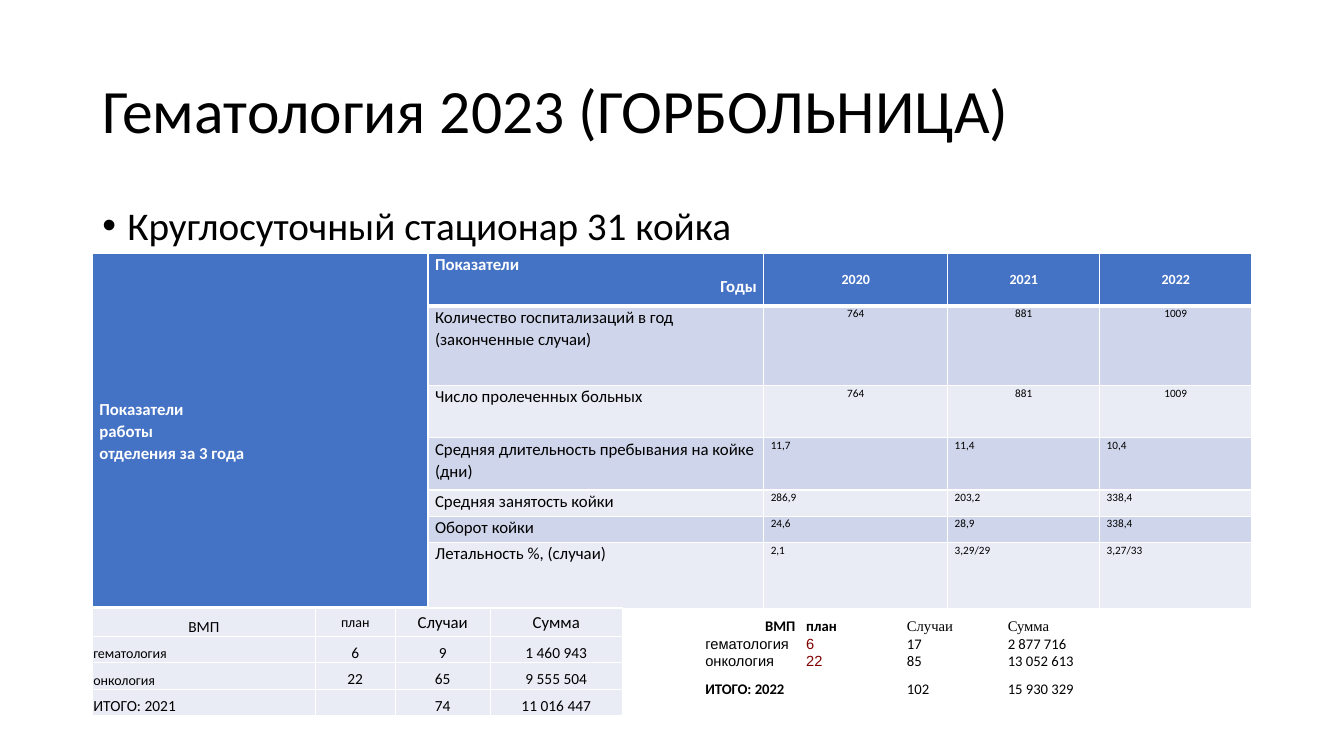
"""Build the haematology department slide with its yearly indicators and high-tech care totals."""
from lxml.etree import SubElement
from pptx import Presentation
from pptx.dml.color import RGBColor
from pptx.enum.text import MSO_ANCHOR as Anchor, PP_ALIGN as Align
from pptx.oxml import parse_xml
from pptx.oxml.ns import nsdecls, qn
from pptx.util import Pt

TITLE = "Гематология 2023 (ГОРБОЛЬНИЦА)"
WARD = "Круглосуточный стационар 31 койка"
DEPARTMENT = ["Показатели", "работы", "отделения за 3 года"]
YEARS = ["2020", "2021", "2022"]
INDICATORS = [
    ("Количество госпитализаций в год (законченные случаи)", Align.CENTER, ["764", "881", "1009"]),
    ("Число пролеченных больных", Align.CENTER, ["764", "881", "1009"]),
    ("Средняя длительность пребывания на койке (дни)", Align.LEFT, ["11,7", "11,4", "10,4"]),
    ("Средняя занятость койки", Align.LEFT, ["286,9", "203,2", "338,4"]),
    ("Оборот койки", Align.LEFT, ["24,6", "28,9", "338,4"]),
    ("Летальность %, (случаи)", Align.LEFT, ["2,1", "3,29/29", "3,27/33"]),
]
CARE_HEADS = [("ВМП", "care"), ("план", "small"), ("Случаи", "label"), ("Сумма", "label")]
CARE_2021 = [
    ("гематология", "small", ["6", "9", "1 460 943"]),
    ("онкология", "small", ["22", "65", "9 555 504"]),
    ("ИТОГО: 2021", "care", ["", "74", "11 016 447"]),
]
CARE_2022 = [
    ({}, [("\tВМП\tплан\t", "total"), ("Случаи\tСумма", "serif")]),
    ({}, [("гематология\t", "sans"), ("6\t", "plan"), ("17\t2 877 716", "sum")]),
    ({}, [("онкология\t", "sans"), ("22\t", "plan"), ("85\t13 052 613", "sum")]),
    ({"space_before": Pt(7)}, [("ИТОГО: 2022\t\t", "total"), ("102\t15 930 329", "sum")]),
]

BLACK, WHITE = "000000", "FFFFFF"
THEME = {
    "head_fill": "4472C4",
    "bands": ["CFD5EA", "E9EBF5"],
    "grid": WHITE,
    "title": ("Calibri", 44, BLACK, False),
    "ward": ("Calibri", 28, BLACK, False),
    "head": ("Calibri", 12, WHITE, True),
    "year": ("Calibri", 10, WHITE, True),
    "label": ("Calibri", 12, BLACK, False),
    "value": ("Calibri", 8, BLACK, False),
    "care": ("Calibri", 11, BLACK, False),
    "small": ("Calibri", 10, BLACK, False),
    "total": ("Calibri", 10.5, BLACK, True),
    "sum": ("Calibri", 10.5, BLACK, False),
    "serif": ("Times New Roman", 10.5, BLACK, False),
    "sans": ("Arial", 10.5, BLACK, False),
    "plan": ("Arial", 10.5, "800000", False),
}
LEFT, WIDTH = 66, 828
YEAR_GRID = {"top": 181, "cols": [239.8, 239.8, 131.4, 108.6, 108.6],
             "rows": [37.4, 56.9, 37.4, 37.4, 18.7, 18.7, 47]}
CARE_GRID = {"top": 434.3, "cols": [159.3, 57, 68, 94.3], "rows": [20.2, 18.9, 18.9, 18.9]}
YEAR_CELL = {"margin_left": Pt(5), "margin_right": Pt(5), "margin_top": 0, "margin_bottom": 0}
CARE_CELL = {"margin_left": Pt(0.7), "margin_right": Pt(0.7), "margin_top": Pt(0.7), "margin_bottom": 0}
COLUMN_STOPS = [(72 * step, "l") for step in range(1, 4)]
HEAD_STOPS = [(64.3, "r")] + COLUMN_STOPS


def apply(target, values):
    for name, value in values.items():
        setattr(target, name, value)


def write(frame, paragraphs):
    for index, (layout, runs) in enumerate(paragraphs):
        paragraph = frame.add_paragraph() if index else frame.paragraphs[0]
        apply(paragraph, layout)
        for text, style in runs:
            face, size, color, bold = THEME[style]
            if not text:
                SubElement(paragraph._p, qn("a:endParaRPr"), sz=str(size * 100))
                continue
            run = paragraph.add_run()
            run.text = text
            apply(run.font, {"name": face, "size": Pt(size), "bold": bold})
            run.font.color.rgb = RGBColor.from_string(color)


def add_text(slide, top, left, width, height, paragraphs, anchor=Anchor.TOP):
    frame = slide.shapes.add_textbox(Pt(left), Pt(top), Pt(width), Pt(height)).text_frame
    apply(frame, {"word_wrap": True, "vertical_anchor": anchor})
    write(frame, paragraphs)
    return frame


def add_grid(slide, grid):
    cols, rows = grid["cols"], grid["rows"]
    table = slide.shapes.add_table(len(rows), len(cols), Pt(LEFT), Pt(grid["top"]),
                                   Pt(sum(cols)), Pt(sum(rows))).table
    for column, width in zip(table.columns, cols):
        column.width = Pt(width)
    for row, height in zip(table.rows, rows):
        row.height = Pt(height)
    return table


def fill_cell(cell, paragraphs, fill, layout, anchor=Anchor.TOP, bottom=1):
    apply(cell, {**layout, "vertical_anchor": anchor})
    cell.fill.solid()
    cell.fill.fore_color.rgb = RGBColor.from_string(fill)
    properties = cell._tc.get_or_add_tcPr()
    for index, (side, weight) in enumerate([("L", 1), ("R", 1), ("T", 1), ("B", bottom)]):
        properties.insert(index, parse_xml(
            f'<a:ln{side} {nsdecls("a")} w="{Pt(weight)}"><a:solidFill>'
            f'<a:srgbClr val="{THEME["grid"]}"/></a:solidFill></a:ln{side}>'))
    write(cell.text_frame, paragraphs)


def line(text, style, align=Align.LEFT, spacing=1.07):
    return {"alignment": align, "line_spacing": spacing}, [(text, style)]


def add_years(slide):
    table = add_grid(slide, YEAR_GRID)
    table.cell(0, 0).merge(table.cell(len(INDICATORS), 0))
    blue = THEME["head_fill"]
    fill_cell(table.cell(0, 0), [line(text, "head") for text in DEPARTMENT],
              blue, YEAR_CELL, Anchor.MIDDLE, 3)
    fill_cell(table.cell(0, 1), [line("Показатели", "head"), line("Годы", "head", Align.RIGHT)],
              blue, YEAR_CELL, bottom=3)
    for col, year in enumerate(YEARS, 2):
        fill_cell(table.cell(0, col), [line(year, "year", Align.CENTER)],
                  blue, YEAR_CELL, Anchor.MIDDLE, 3)
    for row, (label, align, values) in enumerate(INDICATORS, 1):
        band = THEME["bands"][(row - 1) % 2]
        fill_cell(table.cell(row, 0), [line("", "value")], blue, YEAR_CELL, bottom=3)
        fill_cell(table.cell(row, 1), [line(label, "label")], band, YEAR_CELL)
        for col, value in enumerate(values, 2):
            fill_cell(table.cell(row, col), [line(value, "value", align)], band, YEAR_CELL)


def add_care(slide):
    table = add_grid(slide, CARE_GRID)
    band = THEME["bands"][1]
    for col, (head, style) in enumerate(CARE_HEADS):
        fill_cell(table.cell(0, col), [line(head, style, Align.CENTER, 1.0)], band, CARE_CELL,
                  Anchor.MIDDLE if col else Anchor.BOTTOM)
    for row, (label, style, values) in enumerate(CARE_2021, 1):
        fill_cell(table.cell(row, 0), [line(label, style, spacing=1.0)], band, CARE_CELL, Anchor.BOTTOM)
        for col, value in enumerate(values, 1):
            fill_cell(table.cell(row, col), [line(value, "care", Align.CENTER, 1.0)],
                      band, CARE_CELL, Anchor.BOTTOM)


def add_totals(slide):
    totals = add_text(slide, 437, 496.8, 378.7, 67, CARE_2022)
    for index, paragraph in enumerate(totals.paragraphs):
        stops = SubElement(paragraph._p.get_or_add_pPr(), qn("a:tabLst"))
        for position, side in COLUMN_STOPS if index else HEAD_STOPS:
            SubElement(stops, qn("a:tab"), pos=str(Pt(position)), algn=side)


def main():
    deck = Presentation()
    apply(deck, {"slide_width": Pt(960), "slide_height": Pt(540)})
    slide = deck.slides.add_slide(deck.slide_layouts[6])
    add_text(slide, 28.8, LEFT, WIDTH, 104.4, [line(TITLE, "title", spacing=0.9)], Anchor.MIDDLE)
    ward = add_text(slide, 143.8, LEFT, WIDTH, 342.6,
                    [({"line_spacing": 0.9, "space_before": Pt(10)}, [(WARD, "ward")])])
    bullet = ward.paragraphs[0]._p.get_or_add_pPr()
    for name, value in {"marL": Pt(18), "indent": -Pt(18)}.items():
        bullet.set(name, str(value))
    SubElement(bullet, qn("a:buFont"), typeface="Arial")
    SubElement(bullet, qn("a:buChar"), char="•")
    add_years(slide)
    add_care(slide)
    add_totals(slide)
    deck.save("out.pptx")


if __name__ == "__main__":
    main()
